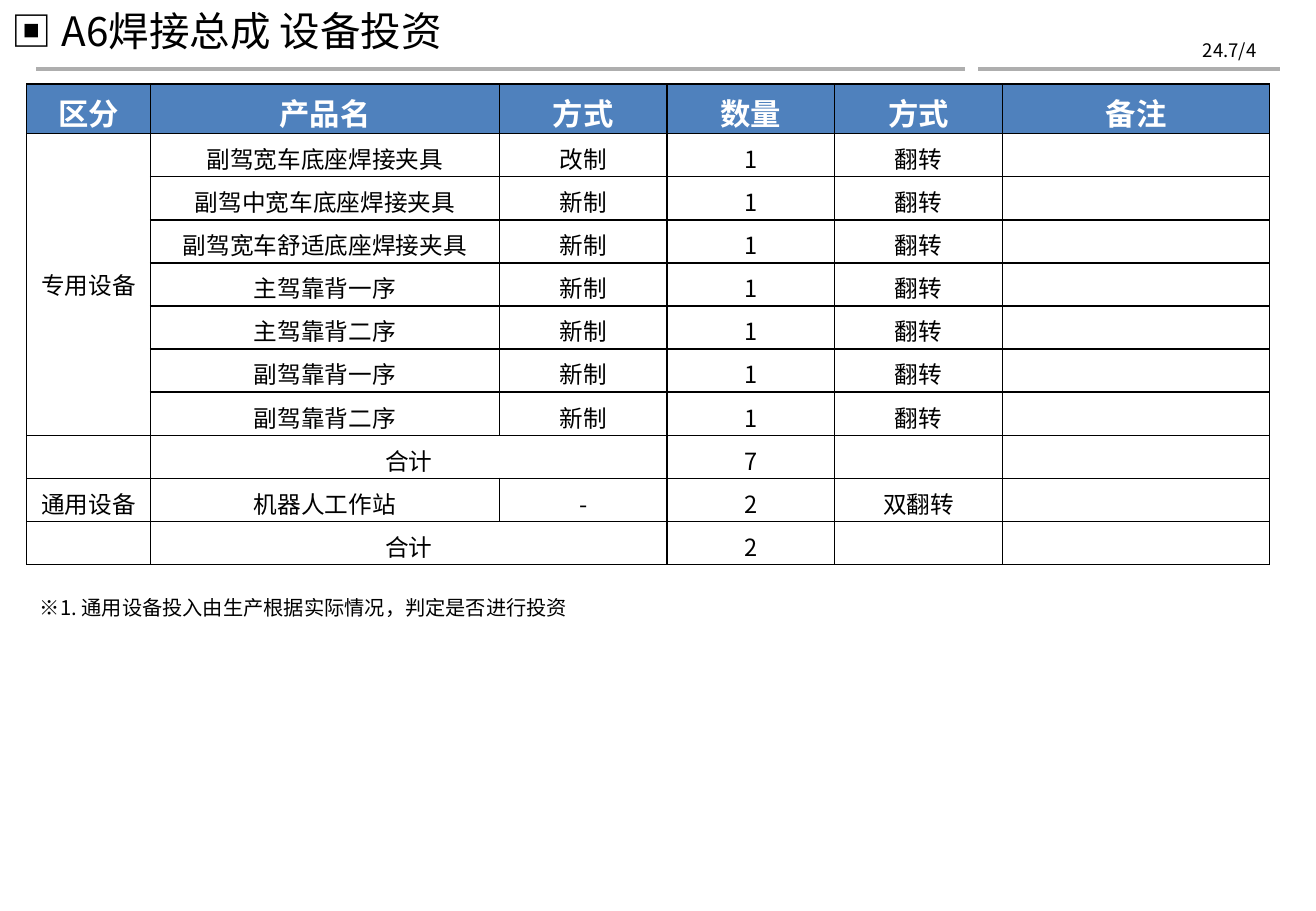
from lxml.etree import SubElement
from pptx import Presentation
from pptx.dml.color import RGBColor
from pptx.enum.shapes import MSO_CONNECTOR
from pptx.enum.text import MSO_ANCHOR, PP_ALIGN
from pptx.oxml.ns import qn
from pptx.util import Pt

PX = 4572  # EMU per px, 200 px to the inch
SANS_SC = "Noto Sans CJK SC"
SANS_KR = "Noto Sans CJK KR"
BLACK, WHITE, RULE_GREY, HEADER_BLUE = "000000", "FFFFFF", "AEAEAE", "4F81BD"

COLUMN_WIDTHS = [204, 574, 276, 276, 276, 440]
HEADER_HEIGHT, ROW_HEIGHT = 82, 71
HEADINGS = ["区分", "产品名", "方式", "数量", "方式", "备注"]
FIXTURES = [
    ("副驾宽车底座焊接夹具", "改制"),
    ("副驾中宽车底座焊接夹具", "新制"),
    ("副驾宽车舒适底座焊接夹具", "新制"),
    ("主驾靠背一序", "新制"),
    ("主驾靠背二序", "新制"),
    ("副驾靠背一序", "新制"),
    ("副驾靠背二序", "新制"),
]


def px(length):
    return length * PX


def rgb(color):
    return RGBColor.from_string(color)


def style(paragraph, size, color=BLACK, face=SANS_SC, bold=False, align=PP_ALIGN.LEFT):
    paragraph.alignment = align
    font = paragraph.font
    font.size, font.bold, font.name = Pt(size), bold, face
    font.color.rgb = rgb(color)
    # East Asian typeface
    SubElement(font._element, qn("a:ea")).set("typeface", face)


def add_label(slide, box, text, size, **look):
    label = slide.shapes.add_textbox(*map(px, box))
    frame = label.text_frame
    frame.word_wrap = True
    frame.vertical_anchor = MSO_ANCHOR.MIDDLE
    frame.margin_top = frame.margin_bottom = 0
    frame.text = text
    style(frame.paragraphs[0], size, **look)


def add_rule(slide, left, right, y):
    rule = slide.shapes.add_connector(MSO_CONNECTOR.STRAIGHT, px(left), px(y), px(right), px(y))
    rule.line.color.rgb = rgb(RULE_GREY)
    rule.line.width = Pt(2)
    SubElement(rule._element.spPr, qn("a:effectLst"))


def add_header(slide, left, top, width, height):
    # Rules below the title and the date
    rule_y = top + height
    add_rule(slide, left + 60, left + 1588, rule_y)
    add_rule(slide, left + 1610, left + width - 60, rule_y)
    # Date and title
    add_label(slide, (left + width - 296, rule_y - 60, 218, 58), "24.7/4", 11,
              face=SANS_KR, align=PP_ALIGN.RIGHT)
    add_label(slide, (left, top, 1824, 100), "▣ A6焊接总成 设备投资", 24)


def add_borders(cell):
    properties = cell._tc.get_or_add_tcPr()
    for position, side in enumerate(("lnL", "lnR", "lnT", "lnB")):
        border = SubElement(properties, qn(f"a:{side}"), w=str(Pt(1)))
        fill = SubElement(border, qn("a:solidFill"))
        SubElement(fill, qn("a:srgbClr"), val=BLACK)
        properties.insert(position, border)


def fill_cell(cell, text, is_heading):
    cell.text = text
    cell.margin_top, cell.margin_bottom = px(10), 0
    cell.margin_left = cell.margin_right = px(10)
    cell.vertical_anchor = MSO_ANCHOR.TOP if is_heading else MSO_ANCHOR.MIDDLE
    style(cell.text_frame.paragraphs[0], 18 if is_heading else 14,
          WHITE if is_heading else BLACK, bold=is_heading, align=PP_ALIGN.CENTER)
    if is_heading:
        cell.fill.solid()
        cell.fill.fore_color.rgb = rgb(HEADER_BLUE)
    else:
        cell.fill.background()
    add_borders(cell)


def add_investment_table(slide, left, top):
    rows = [HEADINGS]
    rows += [["", name, method, "1", "翻转", ""] for name, method in FIXTURES]
    rows += [
        ["", "合计", "", "7", "", ""],
        ["通用设备", "机器人工作站", "-", "2", "双翻转", ""],
        ["", "合计", "", "2", "", ""],
    ]
    rows[1][0] = "专用设备"
    heights = [HEADER_HEIGHT] + [ROW_HEIGHT] * (len(rows) - 1)
    table = slide.shapes.add_table(
        len(rows), len(HEADINGS), px(left), px(top),
        px(sum(COLUMN_WIDTHS)), px(sum(heights))).table
    for column, width in zip(table.columns, COLUMN_WIDTHS):
        column.width = px(width)
    for r, (values, height) in enumerate(zip(rows, heights)):
        table.rows[r].height = px(height)
        for c, text in enumerate(values):
            fill_cell(table.cell(r, c), text, is_heading=r == 0)

    # Dedicated equipment spans its fixtures; totals span name and method
    dedicated = table.cell(1, 0)
    dedicated.merge(table.cell(len(FIXTURES), 0))
    dedicated.margin_top = 0
    for r, values in enumerate(rows):
        if values[1] == "合计":
            table.cell(r, 1).merge(table.cell(r, 2))


def main():
    deck = Presentation()
    deck.slide_width, deck.slide_height = px(2166), px(1500)
    slide = deck.slides.add_slide(deck.slide_layouts[6])
    add_header(slide, 0, 0, 2166, 114)
    add_investment_table(slide, 44, 138)
    # Footnote
    add_label(slide, (46, 970, 1938, 60),
              "※1. 通用设备投入由生产根据实际情况，判定是否进行投资", 12)
    deck.save("out.pptx")


if __name__ == "__main__":
    main()
